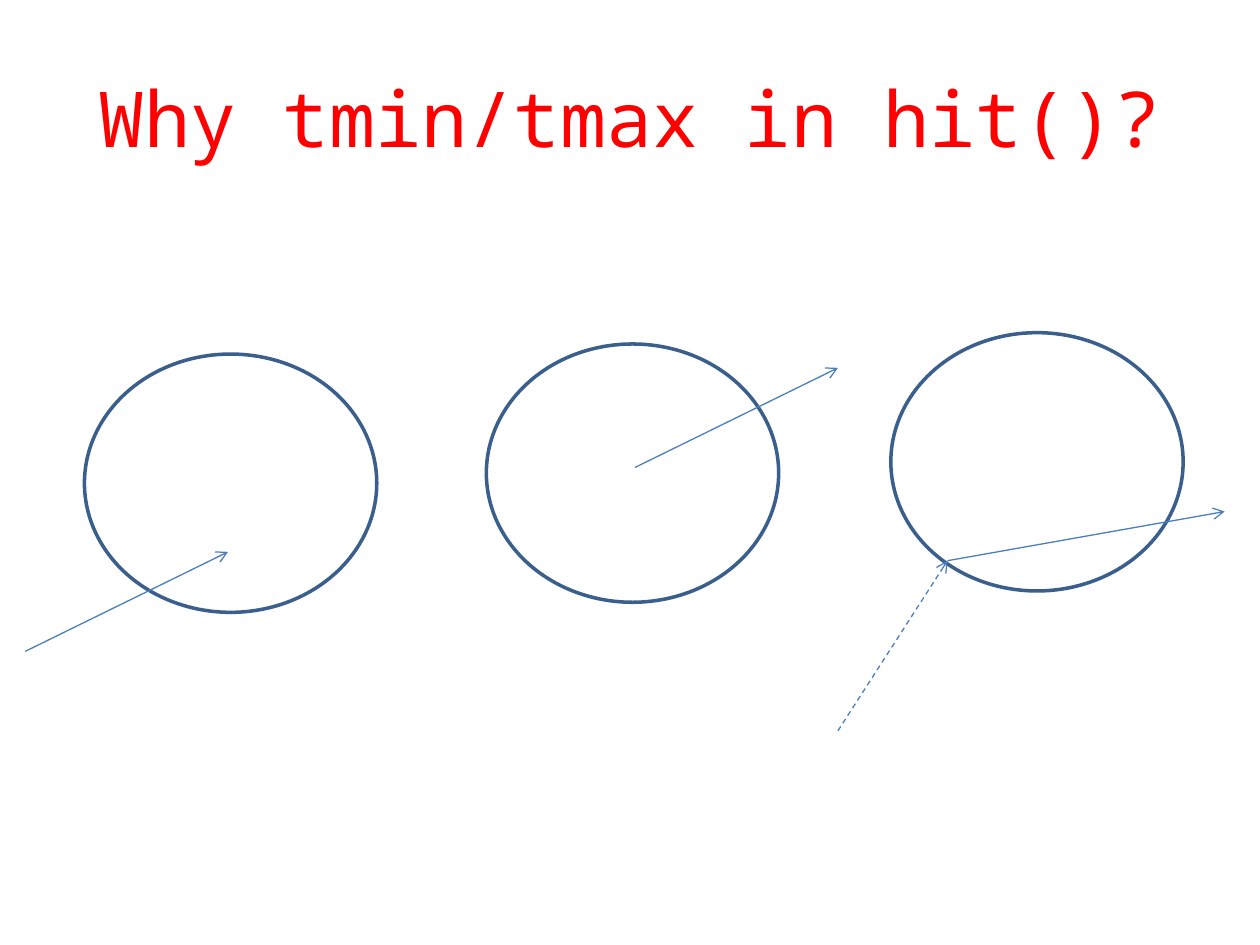
"""Build a slide showing three ray and sphere cases behind tmin/tmax in hit()."""
from dataclasses import dataclass

from lxml import etree
from pptx import Presentation
from pptx import util as u
from pptx.dml import color
from pptx.enum import dml, shapes, text
from pptx.oxml import ns


@dataclass(frozen=True)
class Theme:
    title_color: color.RGBColor = color.RGBColor.from_string("FF0000")
    sphere_color: color.RGBColor = color.RGBColor.from_string("3A5F8C")
    ray_color: color.RGBColor = color.RGBColor.from_string("4B7EBC")
    font: str = "Noto Sans Mono"
    title_size: u.Pt = u.Pt(44)
    sphere_width: u.Pt = u.Pt(2)
    ray_width: u.Pt = u.Pt(0.75)


theme = Theme()
SOLID, DASHED = dml.MSO_LINE.SOLID, dml.MSO_LINE.DASH
sphere_size = u.Inches(2.32), u.Inches(2.05)
contact = (7.52, 4.45)
cases = [
    ((0.67, 2.81), [((0.2, 5.17), (1.81, 4.38), SOLID)]),
    ((3.86, 2.73), [((5.04, 3.71), (6.65, 2.92), SOLID)]),
    ((7.07, 2.64), [(contact, (9.72, 4.06), SOLID), ((6.65, 5.8), contact, DASHED)]),
]

deck = Presentation()
deck.slide_width, deck.slide_height = u.Inches(10), u.Inches(7.5)
slide = deck.slides.add_slide(deck.slide_layouts[6])

title = slide.shapes.add_textbox(u.Inches(0.5), u.Inches(0.3), u.Inches(9), u.Inches(1.25))
title.text_frame.word_wrap = True
title.text_frame.vertical_anchor = text.MSO_ANCHOR.MIDDLE
title.text_frame.text = "Why tmin/tmax in hit()?"
heading = title.text_frame.paragraphs[0]
heading.alignment = text.PP_ALIGN.CENTER
heading_font = heading.runs[0].font
heading_font.name = theme.font
heading_font.size = theme.title_size
heading_font.color.rgb = theme.title_color

for corner, rays in cases:
    sphere = slide.shapes.add_shape(
        shapes.MSO_SHAPE.OVAL, *map(u.Inches, corner), *sphere_size
    )
    sphere.shadow.inherit = False
    sphere.fill.background()
    sphere.line.color.rgb = theme.sphere_color
    sphere.line.width = theme.sphere_width

    for origin, tip, dash in rays:
        ray = slide.shapes.add_connector(
            shapes.MSO_CONNECTOR.STRAIGHT, *map(u.Inches, origin + tip)
        )
        ray.line.color.rgb = theme.ray_color
        ray.line.width = theme.ray_width
        ray.line.dash_style = dash
        outline = ray.line._get_or_add_ln()
        etree.SubElement(outline, ns.qn("a:tailEnd"), type="arrow")
        etree.SubElement(ray._element.spPr, ns.qn("a:effectLst"))

deck.save("out.pptx")
